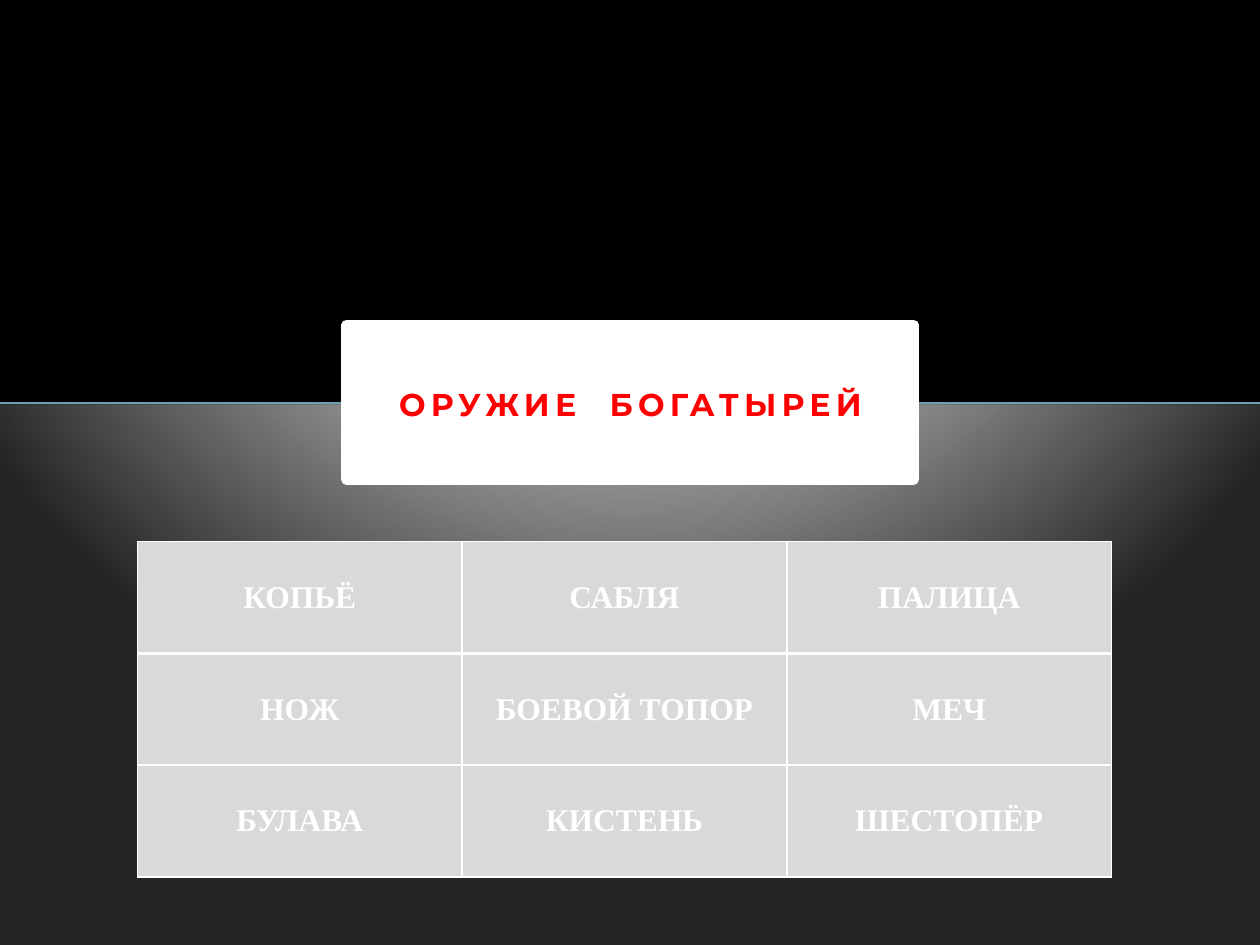
from dataclasses import dataclass

from pptx import Presentation
from pptx import oxml as ox
from pptx import util as u
from pptx.dml.color import RGBColor
from pptx.enum import shapes, text
from pptx.oxml import ns


@dataclass(frozen=True)
class Theme:
    black: str = "000000"
    white: str = "FFFFFF"
    red: str = "FF0000"
    rule: str = "6EA0B0"
    cell: str = "D9D9D9"
    glow: tuple = ((0, "CECECE"), (40, "C6C6C6"), (100, "232323"))
    title_font: str = "Montserrat"
    table_font: str = "Times New Roman"
    text_size: int = 18


@dataclass(frozen=True)
class Box:
    left: float
    top: float
    width: float
    height: float

    def inner(self, left, top, width, height):
        return Box(self.left + left, self.top + top, width, height)

    def lengths(self):
        return [u.Cm(side) for side in (self.left, self.top, self.width, self.height)]


THEME = Theme()
PAGE = Box(0, 0, 25.4, 19.05)
HEADER = Box(0, 0, 25.4, 9.72)
GRID = Box(2.77, 10.92, 19.64, 6.76)
WEAPONS = [
    ["КОПЬЁ", "САБЛЯ", "ПАЛИЦА"],
    ["НОЖ", "БОЕВОЙ ТОПОР", "МЕЧ"],
    ["БУЛАВА", "КИСТЕНЬ", "ШЕСТОПЁР"],
]


def rgb(value):
    return RGBColor.from_string(value)


def write(frame, words, *, font, color, before=0, spacing=0):
    para = frame.paragraphs[0]
    para.alignment = text.PP_ALIGN.CENTER
    para.space_before = u.Pt(before)
    span = para.add_run()
    span.text = words
    span.font.name = font
    span.font.size = u.Pt(THEME.text_size)
    span.font.bold = True
    span.font.color.rgb = rgb(color)
    if spacing:
        span._r.get_or_add_rPr().set("spc", str(spacing * 100))


def add_panel(page, box, color, line_width=0):
    panel = page.shapes.add_shape(shapes.MSO_SHAPE.RECTANGLE, *box.lengths())
    panel.shadow.inherit = False
    panel.fill.solid()
    panel.fill.fore_color.rgb = rgb(color)
    if line_width:
        panel.line.color.rgb = rgb(color)
        panel.line.width = u.Pt(line_width)
    else:
        panel.line.fill.background()


def add_rule(page, box):
    left, top, width, _ = box.lengths()
    rule = page.shapes.add_connector(
        shapes.MSO_CONNECTOR.STRAIGHT, left, top, left + width, top
    )
    rule.line.color.rgb = rgb(THEME.rule)
    rule.line.width = u.Pt(1)
    rule.element.spPr.append(ox.parse_xml(f"<a:effectLst {ns.nsdecls('a')}/>"))


def add_background(page):
    stops = "".join(
        f'<a:gs pos="{place * 1000}"><a:srgbClr val="{color}"/></a:gs>'
        for place, color in THEME.glow
    )
    backdrop = ox.parse_xml(
        f"<p:bg {ns.nsdecls('p', 'a')}><p:bgPr>"
        f'<a:gradFill rotWithShape="1"><a:gsLst>{stops}</a:gsLst>'
        '<a:path path="circle">'
        '<a:fillToRect l="50000" t="-80000" r="50000" b="180000"/>'
        "</a:path></a:gradFill><a:effectLst/></p:bgPr></p:bg>"
    )
    page.element.find(ns.qn("p:cSld")).insert(0, backdrop)


def add_header(page, box, words):
    add_panel(page, box.inner(0, 0, box.width, 8.15), THEME.black)
    add_rule(page, box.inner(0, 8.13, box.width, 0))
    add_panel(page, box.inner(6.99, 6.55, 11.43, 3.12), THEME.white, line_width=6)

    title = page.shapes.title
    title.element.getparent().append(title.element)
    title.left, title.top, title.width, title.height = box.inner(
        7.14, 6.93, 11.15, 1.6
    ).lengths()
    frame = title.text_frame
    frame.word_wrap = True
    frame.auto_size = text.MSO_AUTO_SIZE.NONE
    frame.vertical_anchor = text.MSO_ANCHOR.BOTTOM
    frame.margin_bottom = 0
    write(frame, words, font=THEME.title_font, color=THEME.red, before=4, spacing=3)


def set_borders(cell, widths):
    properties = cell._tc.get_or_add_tcPr()
    for place, (side, width) in enumerate(widths.items()):
        border = ox.parse_xml(
            f'<a:ln{side} {ns.nsdecls("a")} w="{u.Pt(width)}"><a:solidFill>'
            f'<a:srgbClr val="{THEME.white}"/></a:solidFill></a:ln{side}>'
        )
        properties.insert(place, border)


def add_grid(page, box, rows):
    table = page.shapes.add_table(len(rows), len(rows[0]), *box.lengths()).table
    table.first_row = table.horz_banding = False
    for column in table.columns:
        column.width = u.Cm(box.width / len(rows[0]))
    for index, words in enumerate(rows):
        table.rows[index].height = u.Cm(box.height / len(rows))
        top, bottom = (2 if index == heavy else 1 for heavy in (1, 0))
        for place, word in enumerate(words):
            cell = table.cell(index, place)
            cell.vertical_anchor = text.MSO_ANCHOR.MIDDLE
            cell.fill.solid()
            cell.fill.fore_color.rgb = rgb(THEME.cell)
            set_borders(cell, {"L": 1, "R": 1, "T": top, "B": bottom})
            write(cell.text_frame, word, font=THEME.table_font, color=THEME.white)


def main():
    deck = Presentation()
    deck.slide_width, deck.slide_height = PAGE.lengths()[2:]
    page = deck.slides.add_slide(deck.slide_layouts.get_by_name("Title Only"))
    add_background(page)
    add_header(page, HEADER, "ОРУЖИЕ  БОГАТЫРЕЙ")
    add_grid(page, GRID, WEAPONS)
    deck.save("out.pptx")


if __name__ == "__main__":
    main()
